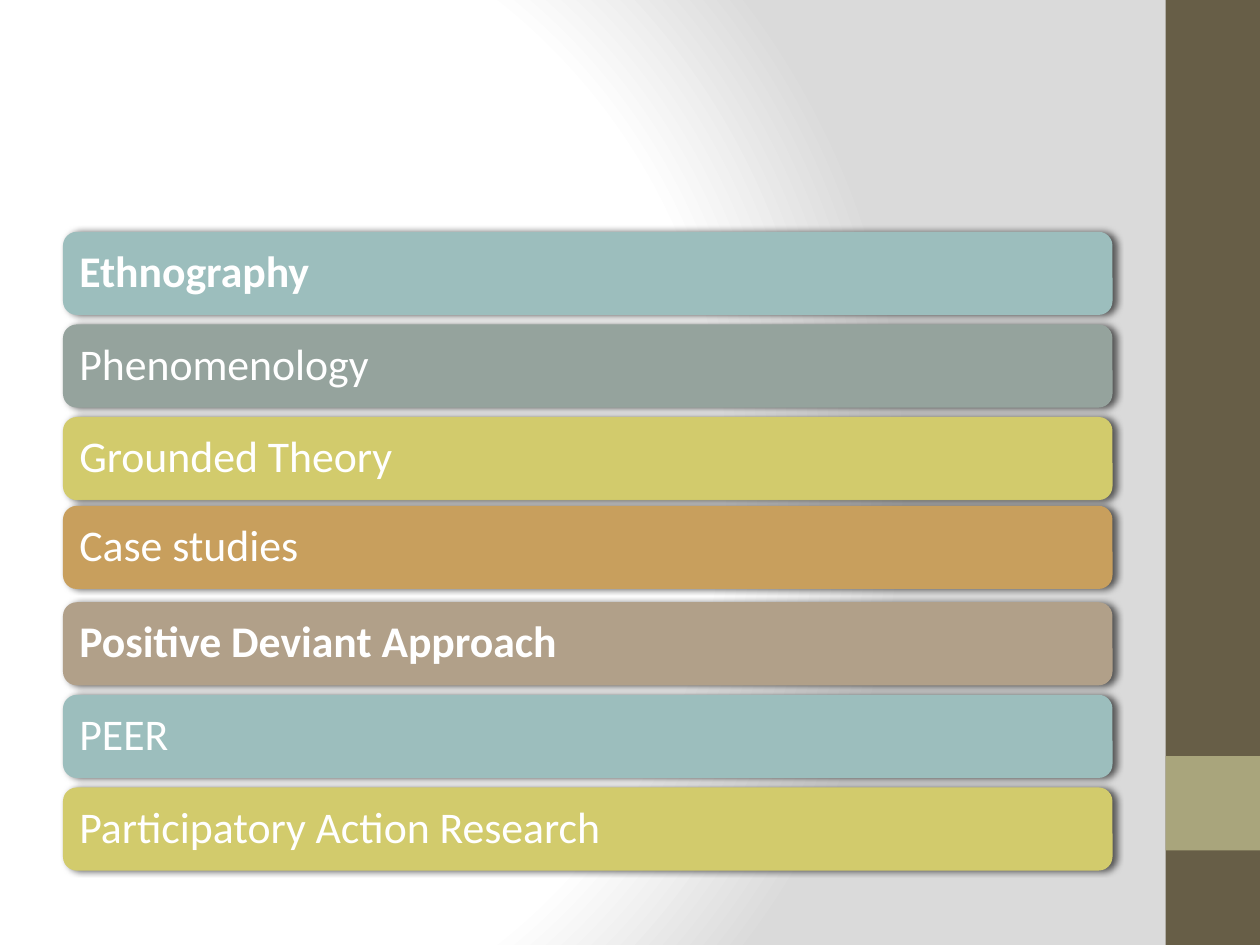
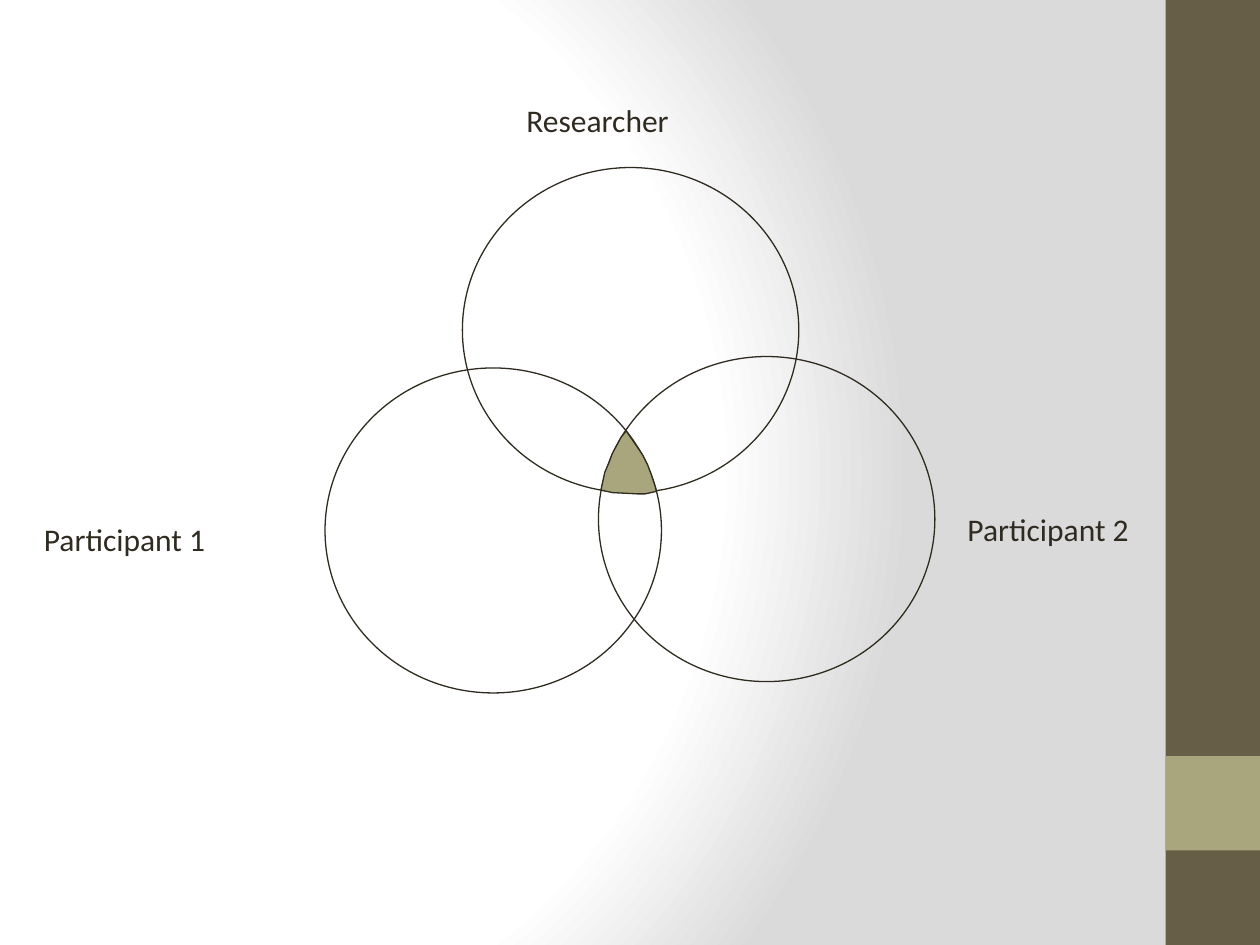
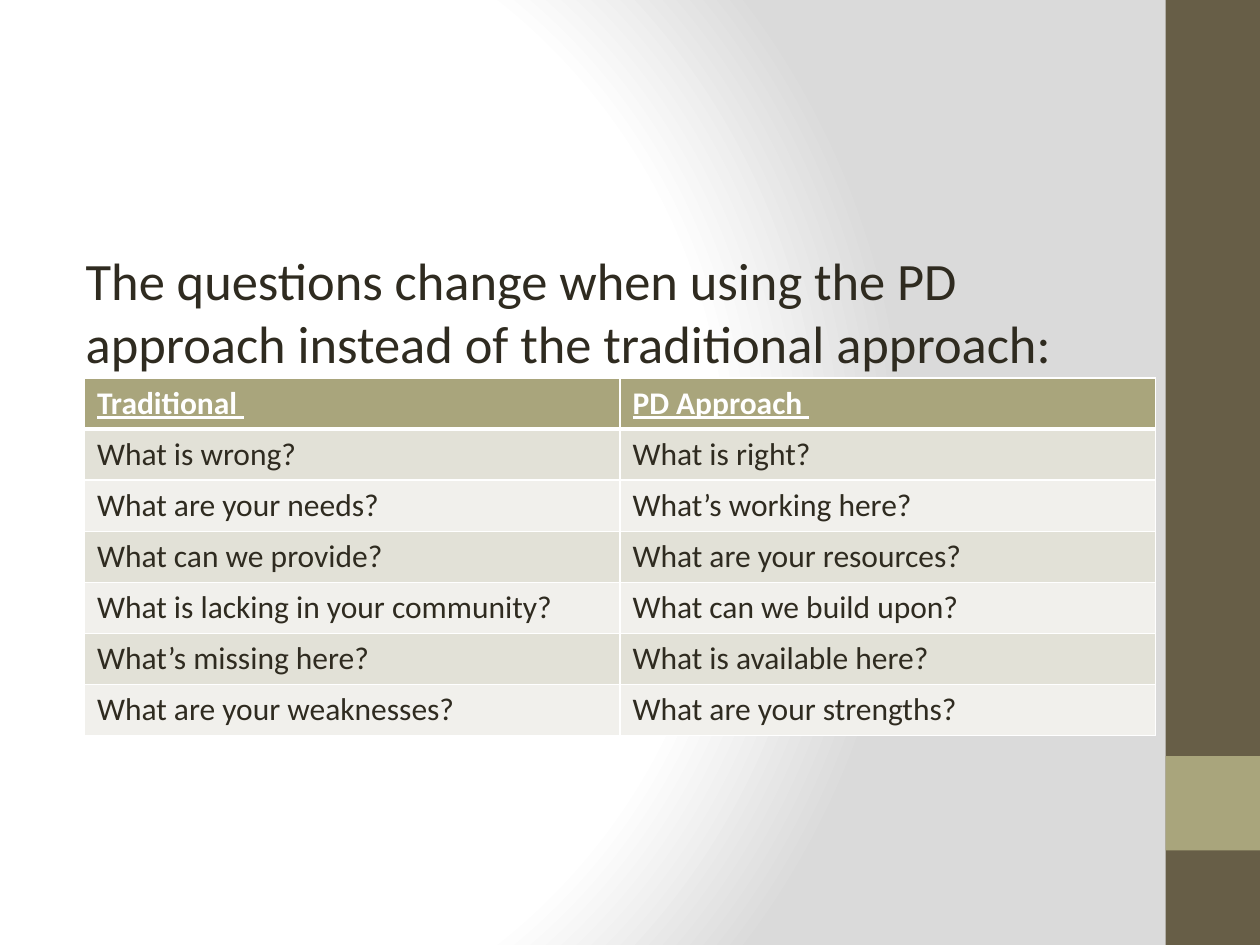
from dataclasses import dataclass
from typing import NamedTuple

import pptx
import pptx.dml.color
import pptx.enum.shapes
import pptx.enum.text
import pptx.oxml
import pptx.oxml.ns
import pptx.presentation
import pptx.shapes.autoshape
import pptx.slide
import pptx.table
import pptx.text.text
import pptx.util

Inches = pptx.util.Inches
Pt = pptx.util.Pt
Shape = pptx.enum.shapes.MSO_SHAPE
Anchor = pptx.enum.text.MSO_ANCHOR
Align = pptx.enum.text.PP_ALIGN
Fit = pptx.enum.text.MSO_AUTO_SIZE
NS = pptx.oxml.ns.nsdecls("a", "p")


@dataclass(frozen=True)
class Theme:
    font: str = "Calibri"
    ink: str = "2F2B20"
    white: str = "FFFFFF"
    grey: str = "DADADA"
    brown: str = "675E47"
    olive: str = "A9A57C"
    teal: str = "9CBEBD"
    sage: str = "95A39D"
    lime: str = "D2CB6C"
    amber: str = "C89F5D"
    taupe: str = "B1A089"
    odd: str = "E2E1D7"
    even: str = "F1F0EC"
    title: int = 30
    bar: int = 25
    text: int = 18
    line: float = 0.75


THEME = Theme()


class Box(NamedTuple):
    left: float
    top: float
    width: float
    height: float

    def place(self) -> list[int]:
        return [Inches(side) for side in self]


class Bar(NamedTuple):
    text: str
    fill: str
    bold: bool = False
    shift: float = 0


class Label(NamedTuple):
    text: str
    left: float
    top: float


BANDS = [(Box(9.25, 0, 0.75, 7.5), THEME.brown),
         (Box(9.25, 6, 0.75, 0.75), THEME.olive)]

BARS = [
    Bar("Ethnography", THEME.teal, bold=True),
    Bar("Phenomenology", THEME.sage),
    Bar("Grounded Theory", THEME.lime),
    Bar("Case studies", THEME.amber, shift=-0.03),
    Bar("Positive Deviant Approach", THEME.taupe, bold=True),
    Bar("PEER", THEME.teal),
    Bar("Participatory Action Research", THEME.lime),
]
BAR_TOP, BAR_END = 1.84, 6.25
BAR_STEP = (BAR_END - BAR_TOP) / (len(BARS) - 1)

RINGS = [(2.58, 2.92), (4.75, 2.83), (3.67, 1.33)]
LABELS = [
    Label("Researcher", 4.08, 0.75),
    Label("Participant 1", 0.25, 4.08),
    Label("Participant 2", 7.58, 4),
]
CORE = [
    (4.97, 3.42), (5.06, 3.55), (5.1, 3.61), (5.14, 3.69), (5.17, 3.77),
    (5.2, 3.86), (5.21, 3.9), (5.12, 3.92), (5.06, 3.92), (4.86, 3.91),
    (4.77, 3.89), (4.8, 3.75), (4.83, 3.68), (4.86, 3.6), (4.93, 3.47),
]

ROWS = [
    ("Traditional ", "PD Approach "),
    ("What is wrong?", "What is right?"),
    ("What are your needs?", "What’s working here?"),
    ("What can we provide?", "What are your resources?"),
    ("What is lacking in your community?", "What can we build upon?"),
    ("What’s missing here?", "What is available here?"),
    ("What are your weaknesses?", "What are your strengths?"),
]


def tint(code: str) -> pptx.dml.color.RGBColor:
    return pptx.dml.color.RGBColor.from_string(code)


def write(frame: pptx.text.text.TextFrame, text: str, size: int, ink: str,
          bold: bool = False, under: bool = False) -> None:
    """Add one styled run to the first paragraph."""
    frame.word_wrap = True
    run = frame.paragraphs[0].add_run()
    run.text = text
    font = run.font
    font.name, font.size = THEME.font, Pt(size)
    font.bold, font.underline = bold, under
    font.color.rgb = tint(ink)


def style(shape: pptx.shapes.autoshape.Shape, fill: str = "",
          line: str = "") -> None:
    """Set fill and line, with none where no colour is given."""
    shape.shadow.inherit = False
    if fill:
        shape.fill.solid()
        shape.fill.fore_color.rgb = tint(fill)
    else:
        shape.fill.background()
    if line:
        shape.line.color.rgb = tint(line)
        shape.line.width = Pt(THEME.line)
    else:
        shape.line.fill.background()


def dress(master: pptx.slide.SlideMaster, slide: pptx.slide.Slide) -> None:
    """Give the master its backdrop and side bands, drawn by way of a slide."""
    stops = [(0, THEME.white), (75, THEME.white), (100, THEME.grey)]
    marks = "".join(f'<a:gs pos="{pos * 1000}"><a:srgbClr val="{code}"/></a:gs>'
                    for pos, code in stops)
    page = master.element.cSld
    page.remove(page.bg)
    page.insert(0, pptx.oxml.parse_xml(
        f'<p:bg {NS}><p:bgPr><a:gradFill rotWithShape="1">'
        f'<a:gsLst>{marks}</a:gsLst><a:path path="circle">'
        '<a:fillToRect l="20000" t="50000" r="100000" b="50000"/></a:path>'
        '</a:gradFill><a:effectLst/></p:bgPr></p:bg>'))
    for spot, (box, fill) in enumerate(BANDS, start=2):
        band = slide.shapes.add_shape(Shape.RECTANGLE, *box.place())
        style(band, fill)
        master.shapes.element.insert(spot, band.element)


def cast(shape: pptx.shapes.autoshape.Shape) -> None:
    """Add a soft black shadow to the right."""
    shape.element.spPr.find(pptx.oxml.ns.qn("a:effectLst")).append(
        pptx.oxml.parse_xml(
            f'<a:outerShdw {NS} blurRad="{Pt(4)}" dist="{Pt(2)}" dir="0" '
            'rotWithShape="0"><a:srgbClr val="000000"><a:alpha val="60000"/>'
            '</a:srgbClr></a:outerShdw>'))


def draw_bars(slide: pptx.slide.Slide) -> None:
    for rank, bar in enumerate(BARS):
        box = Box(0.5, BAR_TOP + rank * BAR_STEP + bar.shift, 8.33, 0.66)
        shape = slide.shapes.add_shape(Shape.ROUNDED_RECTANGLE, *box.place())
        style(shape, bar.fill)
        cast(shape)
        frame = shape.text_frame
        frame.margin_left = frame.margin_right = Inches(0.1)
        frame.vertical_anchor = Anchor.MIDDLE
        frame.paragraphs[0].alignment = Align.LEFT
        frame.paragraphs[0].line_spacing = 0.9
        write(frame, bar.text, THEME.bar, THEME.white, bar.bold)


def draw_rings(slide: pptx.slide.Slide) -> None:
    for left, top in RINGS:
        box = Box(left, top, 2.67, 2.58)
        ring = slide.shapes.add_shape(Shape.OVAL, *box.place())
        style(ring, line=THEME.ink)
    for label in LABELS:
        box = Box(label.left, label.top, 2.25, 0.5)
        frame = slide.shapes.add_textbox(*box.place()).text_frame
        write(frame, label.text, THEME.text, THEME.ink)
    first, *rest = [(Inches(x), Inches(y)) for x, y in CORE]
    pen = slide.shapes.build_freeform(*first)
    pen.add_line_segments(rest, close=True)
    style(pen.convert_to_shape(), THEME.olive, THEME.ink)


def edge(cell: pptx.table._Cell, top: int, base: int) -> None:
    """Draw white borders, the upper and lower ones with the given widths."""
    widths = {"lnL": 1, "lnR": 1, "lnT": top, "lnB": base}
    for spot, (tag, width) in enumerate(widths.items()):
        cell._tc.get_or_add_tcPr().insert(spot, pptx.oxml.parse_xml(
            f'<a:{tag} {NS} w="{Pt(width)}"><a:solidFill>'
            f'<a:srgbClr val="{THEME.white}"/></a:solidFill></a:{tag}>'))


def draw_table(slide: pptx.slide.Slide) -> None:
    box = Box(0.67, 3, 8.5, 2.83)
    grid = slide.shapes.add_table(len(ROWS), 2, *box.place()).table
    for rank, texts in enumerate(ROWS):
        head = rank == 0
        fill = THEME.olive if head else THEME.odd if rank % 2 else THEME.even
        for col, text in enumerate(texts):
            cell = grid.cell(rank, col)
            cell.fill.solid()
            cell.fill.fore_color.rgb = tint(fill)
            edge(cell, top=3 if rank == 1 else 1, base=3 if head else 1)
            write(cell.text_frame, text, THEME.text,
                  THEME.white if head else THEME.ink, head, head)


def set_title(slide: pptx.slide.Slide, text: str, box: Box) -> None:
    title = slide.shapes.title
    title.left, title.top, title.width, title.height = box.place()
    frame = title.text_frame
    frame.auto_size = Fit.NONE
    frame.vertical_anchor = Anchor.TOP
    frame.paragraphs[0].alignment = Align.LEFT
    write(frame, text, THEME.title, THEME.ink)


def main() -> None:
    deck = pptx.Presentation()
    deck.slide_width, deck.slide_height = Inches(10), Inches(7.5)
    titled, blank = deck.slide_layouts[5], deck.slide_layouts[6]

    designs = deck.slides.add_slide(blank)
    dress(deck.slide_master, designs)
    draw_bars(designs)

    draw_rings(deck.slides.add_slide(blank))

    change = deck.slides.add_slide(titled)
    set_title(change, "The questions change when using the PD approach "
              "instead of the traditional approach:",
              Box(0.58, 1.92, 8.58, 1.11))
    draw_table(change)

    deck.save("out.pptx")


if __name__ == "__main__":
    main()
